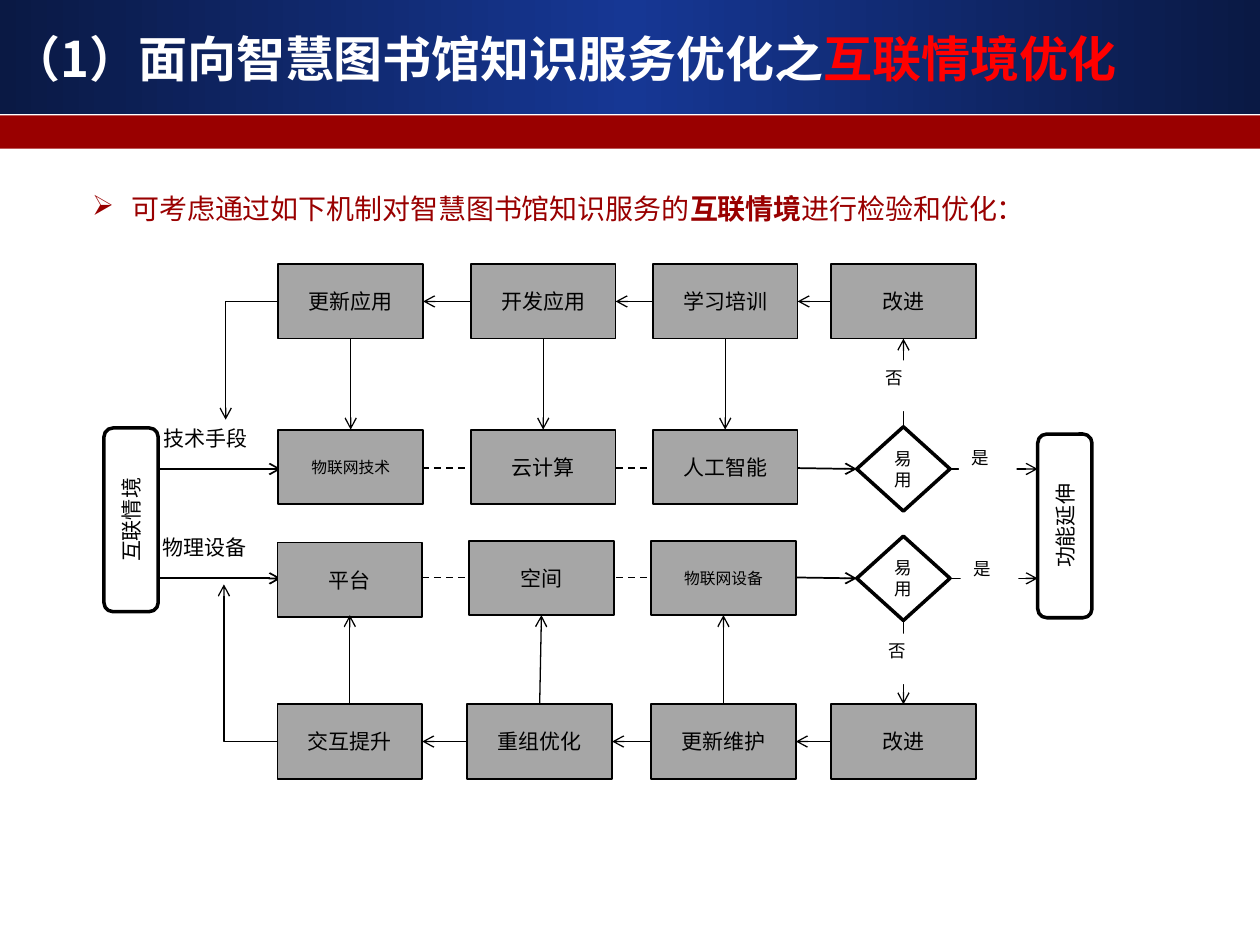
from copy import deepcopy
from dataclasses import dataclass
from itertools import pairwise

from lxml import etree
from pptx import Presentation
from pptx.dml.color import RGBColor
from pptx.enum.dml import MSO_LINE
from pptx.enum.shapes import MSO_CONNECTOR, MSO_SHAPE
from pptx.enum.text import MSO_ANCHOR, PP_ALIGN
from pptx.oxml.ns import qn
from pptx.util import Pt

RECTANGLE, ROUNDED = MSO_SHAPE.RECTANGLE, MSO_SHAPE.ROUNDED_RECTANGLE
DECISION = MSO_SHAPE.FLOWCHART_DECISION
STRAIGHT, ELBOW = MSO_CONNECTOR.STRAIGHT, MSO_CONNECTOR.ELBOW
DASH = MSO_LINE.DASH
TOP, MIDDLE = MSO_ANCHOR.TOP, MSO_ANCHOR.MIDDLE
LEFT, CENTER = PP_ALIGN.LEFT, PP_ALIGN.CENTER


@dataclass(frozen=True)
class Theme:
    navy: str = "0A1944"
    blue: str = "163794"
    maroon: str = "990000"
    red: str = "FF0000"
    white: str = "FFFFFF"
    black: str = "000000"
    gray: str = "A6A6A6"
    heading_font: str = "Noto Sans CJK SC"
    box_font: str = "Roboto"
    label_font: str = "Calibri"
    title_size: float = 28
    lead_size: float = 16
    box_size: float = 12
    answer_size: float = 10
    small_size: float = 9
    thin: float = 0.75
    medium: float = 1
    thick: float = 2


THEME = Theme()
BOX_WIDTH, BOX_HEIGHT = 82.8, 42.5


def color(value):
    return RGBColor.from_string(value)


def add_text(paragraph, text, *, font, size, fill=THEME.black, bold=False, align=None):
    """Append one formatted run to a paragraph."""
    if align is not None:
        paragraph.alignment = align
    run = paragraph.add_run()
    run.text = text
    run.font.name, run.font.size, run.font.bold = font, Pt(size), bold
    run.font.color.rgb = color(fill)
    east_asian = etree.SubElement(run.font._element, qn("a:ea"))
    east_asian.set("typeface", font)


def add_box(slide, kind, left, top, width, height, *, fill, line=None, line_width=1):
    shape = slide.shapes.add_shape(kind, Pt(left), Pt(top), Pt(width), Pt(height))
    shape.shadow.inherit = False
    shape.fill.solid()
    shape.fill.fore_color.rgb = color(fill)
    if line:
        shape.line.color.rgb = color(line)
        shape.line.width = Pt(line_width)
    else:
        shape.line.fill.background()
    shape.text_frame.word_wrap = True
    return shape


def add_arrow(slide, start, end, *, width=THEME.thin, dash=None, kind=STRAIGHT):
    connector = slide.shapes.add_connector(kind, *(Pt(value) for value in (*start, *end)))
    connector.line.color.rgb = color(THEME.black)
    connector.line.width = Pt(width)
    if dash:
        connector.line.dash_style = dash
    properties = connector._element.spPr
    if kind == ELBOW:  # a single corner
        properties.find(qn("a:prstGeom")).set("prst", "bentConnector2")
    etree.SubElement(properties.find(qn("a:ln")), qn("a:tailEnd")).set("type", "arrow")
    etree.SubElement(properties, qn("a:effectLst"))


def build_header(slide, left, top, width, height):
    # Gradient band with a red strip under it
    band = add_box(slide, RECTANGLE, left, top, width, height - 19.8, fill=THEME.navy)
    band.fill.gradient()
    band.fill.gradient_angle = 0
    stop_list = band._element.spPr.find(".//" + qn("a:gsLst"))
    stop_list.append(deepcopy(stop_list[0]))
    stops = zip(band.fill.gradient_stops, (0, 0.5, 1), (THEME.navy, THEME.blue, THEME.navy))
    for stop, position, value in stops:
        stop.position = position
        stop.color.rgb = color(value)
    add_box(slide, RECTANGLE, left, top + height - 19, width, 19, fill=THEME.maroon)

    # Title, brought in front of the band
    title = slide.shapes.title
    title.left, title.top = Pt(left + 3), Pt(top + 14)
    title.width, title.height = Pt(669), Pt(38)
    frame = title.text_frame
    frame.word_wrap, frame.vertical_anchor = True, MIDDLE
    frame.margin_left = frame.margin_right = frame.margin_top = frame.margin_bottom = Pt(3.6)
    for text, fill in (("（1）面向智慧图书馆知识服务优化之", THEME.white), ("互联情境优化", THEME.red)):
        add_text(frame.paragraphs[0], text, font=THEME.heading_font, size=THEME.title_size,
                 fill=fill, bold=True, align=LEFT)
    slide.shapes._spTree.append(title._element)


def build_lead(slide, left, top, width, height):
    frame = slide.shapes.add_textbox(Pt(left), Pt(top), Pt(width), Pt(height)).text_frame
    frame.word_wrap = False
    paragraph = frame.paragraphs[0]
    properties = paragraph._p.get_or_add_pPr()
    properties.set("marL", str(Pt(22.5)))
    properties.set("indent", str(-Pt(22.5)))
    etree.SubElement(properties, qn("a:buChar")).set("char", "➢")
    for text, bold in (("可考虑通过如下机制对智慧图书馆知识服务的", False),
                       ("互联情境", True), ("进行检验和优化：", False)):
        add_text(paragraph, text, font=THEME.heading_font, size=THEME.lead_size,
                 fill=THEME.maroon, bold=bold, align=LEFT)


def build_flow(slide, left, top, width, height):
    def at(x, y):
        return left + x, top + y

    def node(kind, x, y, w, h, text, *, size=THEME.box_size, font=THEME.box_font,
             fill=THEME.white, line=THEME.black, line_width=THEME.thick,
             align=CENTER, anchor=MIDDLE):
        shape = add_box(slide, kind, *at(x, y), w, h, fill=fill, line=line, line_width=line_width)
        shape.text_frame.vertical_anchor = anchor
        add_text(shape.text_frame.paragraphs[0], text, font=font, size=size, align=align)
        return shape

    def arrow(start, end, **style):
        add_arrow(slide, at(*start), at(*end), **style)

    top_y, technology_y, device_y, bottom_y = 0, 94.5, 158, height - BOX_HEIGHT
    upper_x = (100, 210, 314, 416)
    device_x = (99.5, 209, 313)
    bottom_x = (99.5, 208, 313, 416)
    half_width, half_height = BOX_WIDTH / 2, BOX_HEIGHT / 2
    branches = (117, 179.5)  # centre lines of the two middle rows
    decision_x, decision_width, decision_height = 430.6, 53.3, 48.2
    decision_middle = decision_x + decision_width / 2
    bar_width, bar_height = 31, 105
    end_x = width - bar_width

    # Links of the middle rows, partly behind the boxes
    for y, last_x in zip(branches, (upper_x[2], device_x[2])):
        arrow((182, y - 0.5), (last_x + 24, y - 0.5), width=THEME.medium, dash=DASH)
        arrow((last_x + BOX_WIDTH, y - 0.5), (decision_x, y), width=THEME.medium)
        arrow((bar_width, y), (101.5, y), width=THEME.medium)

    # Start and end bars, turned to read upwards
    for x, y, text in ((0.4, 93.5, "互联情境"), (end_x, 97, "功能延伸")):
        bar = node(ROUNDED, x - (bar_height - bar_width) / 2, y + (bar_height - bar_width) / 2,
                   bar_height, bar_width, text)
        bar.rotation = 270

    # Names of the two branches
    for x, y, text in ((26.7, 150.7, "物理设备"), (27.4, 88.8, "技术手段")):
        label = slide.shapes.add_textbox(*(Pt(value) for value in (*at(x, y), 84, 32)))
        label.text_frame.word_wrap = True
        add_text(label.text_frame.paragraphs[0], text, font=THEME.label_font, size=THEME.box_size)

    # Four rows of boxes
    rows = (
        (top_y, upper_x, ("更新应用", "开发应用", "学习培训", "改进")),
        (technology_y, upper_x, ("物联网技术", "云计算", "人工智能")),
        (device_y, device_x, ("平台", "空间", "物联网设备")),
        (bottom_y, bottom_x, ("交互提升", "重组优化", "更新维护", "改进")),
    )
    for y, columns, texts in rows:
        for x, text in zip(columns, texts):
            node(RECTANGLE, x, y + (text == "平台"), BOX_WIDTH, BOX_HEIGHT, text,
                 size=THEME.small_size if len(text) > 4 else THEME.box_size,
                 fill=THEME.gray, line_width=THEME.medium)

    # Improvement runs leftwards and back to the branches
    for y, columns, corner_x, end_y in ((top_y, upper_x, 70, 88.8), (bottom_y, bottom_x, 69, 183)):
        middle = y + half_height
        for target, source in pairwise(columns):
            arrow((source, middle), (target + BOX_WIDTH, middle))
        arrow((columns[0], middle), (corner_x, end_y), kind=ELBOW)

    # Outer rows feed the middle rows
    for x in upper_x[:3]:
        arrow((x + half_width, BOX_HEIGHT), (x + half_width, technology_y))
    for source, target in zip(bottom_x, device_x):
        arrow((source + half_width, bottom_y), (target + half_width, device_y + BOX_HEIGHT))

    # Decisions and their ways out
    for y, direction, target in zip(branches, (-1, 1), (BOX_HEIGHT, bottom_y)):
        node(DECISION, decision_x, y - decision_height / 2, decision_width, decision_height,
             "易用", size=THEME.answer_size)
        arrow((decision_middle, y + direction * decision_height / 2), (decision_middle, target))
        arrow((decision_x + decision_width, y), (end_x, y))

    # Answers over the arrows
    for x, y, text in ((489, 101, "是"), (490, 164.5, "是"), (440, 55, "否"), (441.5, 211, "否")):
        node(RECTANGLE, x, y, 33, 29, text, size=THEME.answer_size, font=THEME.label_font,
             line=None, align=LEFT, anchor=TOP)


def main():
    presentation = Presentation()
    presentation.slide_width, presentation.slide_height = Pt(720), Pt(540)
    slide = presentation.slides.add_slide(presentation.slide_layouts[5])
    build_header(slide, 0, 0, 720, 85)
    build_lead(slide, 45.5, 106, 563, 26.5)
    build_flow(slide, 59, 151, 565, 294)
    presentation.save("out.pptx")


if __name__ == "__main__":
    main()
